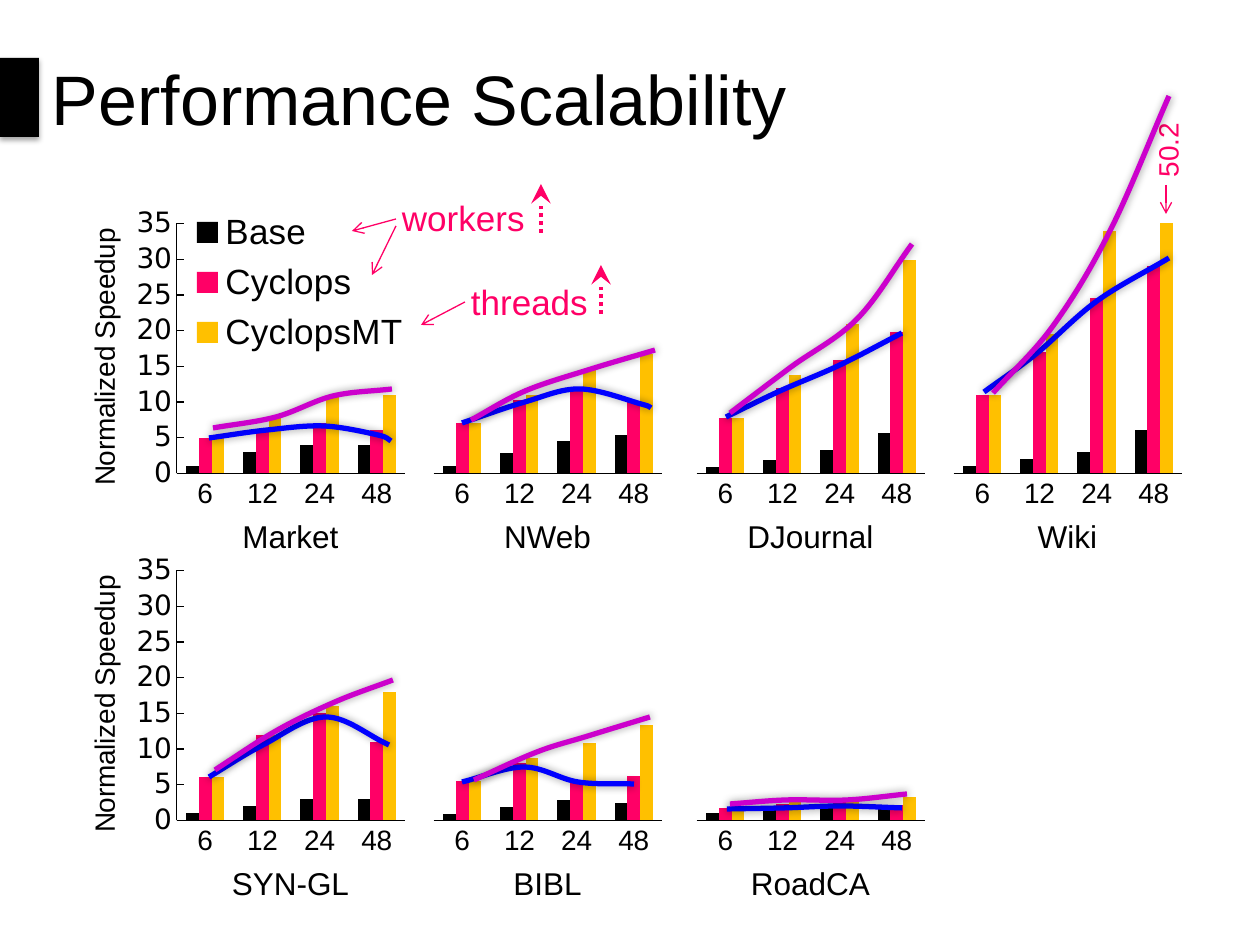
from dataclasses import dataclass

from pptx import Presentation
from pptx.chart.data import CategoryChartData
from pptx.dml.color import RGBColor
from pptx.enum.chart import XL_CHART_TYPE, XL_LEGEND_POSITION, XL_TICK_MARK
from pptx.enum.dml import MSO_LINE
from pptx.enum.shapes import MSO_CONNECTOR, MSO_SHAPE
from pptx.enum.text import MSO_ANCHOR, PP_ALIGN
from pptx.oxml import parse_xml
from pptx.oxml.ns import nsdecls
from pptx.util import Emu, Pt

EMU_PER_PX = 914400 / 126


def px(length):
    return Emu(round(length * EMU_PER_PX))


def apply(target, values):
    for name, value in values.items():
        setattr(target, name, value)


@dataclass(frozen=True)
class Theme:
    ink: RGBColor = RGBColor(0, 0, 0)
    accent: RGBColor = RGBColor(0xFF, 0x00, 0x66)
    gold: RGBColor = RGBColor(0xFF, 0xC0, 0x00)
    trend: RGBColor = RGBColor(0x00, 0x00, 0xFF)
    trend_mt: RGBColor = RGBColor(0xCC, 0x00, 0xCC)
    font: str = "Arial"
    chart_font: str = "Calibri"
    scale_font: str = "DejaVu Sans"
    title: int = 40
    callout: int = 20
    label: int = 18
    axis: int = 16


class SpeedupSlide:
    """Draws styled elements on one slide with lengths in px."""

    def __init__(self, slide, theme):
        self.slide, self.theme = slide, theme

    def set_font(self, font, size, color=None, name=None):
        apply(font, {"size": Pt(size), "name": name or self.theme.font, "bold": False})
        font.color.rgb = color or self.theme.ink

    def set_line(self, line, color, width):
        line.color.rgb = color
        line.width = Pt(width)

    def set_shadow(self, shape, alpha, blur, distance=0, angle=0):
        shape.element.spPr.append(parse_xml(
            f'<a:effectLst {nsdecls("a")}><a:outerShdw blurRad="{Pt(blur)}" dist="{Pt(distance)}" '
            f'dir="{angle * 60000}" algn="ctr" rotWithShape="0"><a:srgbClr val="{self.theme.ink}">'
            f'<a:alpha val="{alpha * 1000}"/></a:srgbClr></a:outerShdw></a:effectLst>'))

    def set_layout(self, parent, position, box, inner=False):
        for old in parent.xpath("c:layout"):
            parent.remove(old)
        target = '<c:layoutTarget val="inner"/>' if inner else ""
        modes = "".join(f'<c:{side}Mode val="edge"/>' for side in "xy")
        sizes = "".join(f'<c:{side} val="{value}"/>' for side, value in zip("xywh", box))
        parent.insert(position, parse_xml(
            f'<c:layout {nsdecls("c")}><c:manualLayout>{target}{modes}{sizes}'
            "</c:manualLayout></c:layout>"))

    def text(self, words, box, size, color=None, align=PP_ALIGN.CENTER,
             spacing=0.8, insets=(0, 0, 0, 0), wrap=False, rotation=0):
        label = self.slide.shapes.add_textbox(*map(px, box))
        label.rotation = rotation
        left, top, right, bottom = map(px, insets)
        apply(label.text_frame, {
            "word_wrap": wrap, "vertical_anchor": MSO_ANCHOR.MIDDLE,
            "margin_left": left, "margin_top": top,
            "margin_right": right, "margin_bottom": bottom})
        paragraph = label.text_frame.paragraphs[0]
        apply(paragraph, {"alignment": align, "line_spacing": spacing})
        run = paragraph.add_run()
        run.text = words
        self.set_font(run.font, size, color)

    def block(self, box):
        bar = self.slide.shapes.add_shape(MSO_SHAPE.RECTANGLE, *map(px, box))
        bar.fill.solid()
        bar.fill.fore_color.rgb = self.theme.ink
        bar.line.fill.background()
        self.set_shadow(bar, 35, 3.1, 1.8, 90)

    def arrow(self, start, end, width=0.75, head="arrow", head_size="med", dash=None):
        pointer = self.slide.shapes.add_connector(
            MSO_CONNECTOR.STRAIGHT, *map(px, (*start, *end)))
        self.set_line(pointer.line, self.theme.accent, width)
        pointer.line.dash_style = dash
        pointer.element.spPr.xpath("a:ln")[0].append(parse_xml(
            f'<a:tailEnd {nsdecls("a")} type="{head}" w="{head_size}" len="{head_size}"/>'))
        pointer.element.spPr.append(parse_xml(f'<a:effectLst {nsdecls("a")}/>'))

    def curve(self, anchors, color):
        last = len(anchors) - 1
        tangents = []
        for i in range(last + 1):
            before, after = max(i - 1, 0), min(i + 1, last)
            tangents.append([(b - a) / (3 * (after - before))
                             for a, b in zip(anchors[before], anchors[after])])
        points = []
        for i in range(last):
            points += [[p + t for p, t in zip(anchors[i], tangents[i])],
                       [p - t for p, t in zip(anchors[i + 1], tangents[i + 1])],
                       anchors[i + 1]]
        builder = self.slide.shapes.build_freeform(*map(px, anchors[0]))
        builder.add_line_segments([tuple(map(px, p)) for p in points], close=False)
        trend = builder.convert_to_shape()
        trend.fill.background()
        self.set_line(trend.line, color, 3)
        self.set_shadow(trend, 40, 5)
        segments = trend.element.xpath(".//a:lnTo")
        outline = segments[0].getparent()
        for i in range(0, len(segments), 3):
            bezier = parse_xml(f'<a:cubicBezTo {nsdecls("a")}/>')
            for segment in segments[i:i + 3]:
                bezier.append(segment[0])
                outline.remove(segment)
            outline.append(bezier)

    def chart(self, box, names, rows, maximum, step, scaled, legend):
        theme = self.theme
        data = CategoryChartData()
        data.categories = ["6", "12", "24", "48"]
        for name, row in zip(names, rows):
            data.add_series(name, row)
        chart = self.slide.shapes.add_chart(
            XL_CHART_TYPE.COLUMN_CLUSTERED, *map(px, box), data).chart
        apply(chart, {"has_title": False, "has_legend": legend})
        self.set_font(chart.font, theme.label, name=theme.chart_font)
        plot = chart.plots[0]
        apply(plot, {"gap_width": 150, "vary_by_categories": False})
        for series, color in zip(plot.series, (theme.ink, theme.accent, theme.gold)):
            series.format.fill.solid()
            series.format.fill.fore_color.rgb = color
        workers, speedup = chart.category_axis, chart.value_axis
        none = XL_TICK_MARK.NONE
        apply(workers, {"major_tick_mark": none, "minor_tick_mark": none})
        apply(speedup, {
            "minimum_scale": 0, "maximum_scale": maximum, "major_unit": step,
            "has_major_gridlines": False, "visible": scaled,
            "major_tick_mark": XL_TICK_MARK.INSIDE, "minor_tick_mark": none})
        for axis, name in ((workers, theme.font), (speedup, theme.scale_font)):
            self.set_font(axis.tick_labels.font, theme.axis, name=name)
            self.set_line(axis.format.line, theme.ink, 0.75)
        if scaled:
            run = speedup.axis_title.text_frame.paragraphs[0].add_run()
            run.text = "Normalized Speedup"
            self.set_font(run.font, theme.axis)
            heading = chart.element.xpath(".//c:valAx/c:title")[0]
            apply_rotation = heading.xpath(".//a:bodyPr")[0].set
            apply_rotation("rot", "-5400000")
            apply_rotation("vert", "horz")
            self.set_layout(heading, 1, (0.03, 0.08))
        self.set_layout(chart.element.xpath(".//c:plotArea")[0], 0,
                        (0.3, 0.08, 0.65, 0.7), inner=True)
        if legend:
            apply(chart.legend, {"position": XL_LEGEND_POSITION.RIGHT, "include_in_layout": True})
            self.set_font(chart.legend.font, theme.callout)
            self.set_layout(chart.element.xpath(".//c:legend")[0], 1, (0.34, 0.02, 0.62, 0.45))


LEFTS, TOPS = (71, 328, 591, 848), (195, 542)
SYSTEMS = ("Base", "Cyclops", "CyclopsMT")
UNNAMED = ("Series 1", "Series 2", "Series 3")
DATASETS = [
    ("Market", 35, 5, [(1, 3, 4, 4), (5, 6, 7, 6), (5, 8, 11, 11)],
     [(209, 438), (267, 430), (324, 426), (378, 435), (391, 441)],
     [(213, 428), (276, 417), (333, 396), (392, 389)]),
    ("NWeb", 210, 30, [(6, 17, 27, 32), (42, 62, 70, 61), (42, 66, 87, 100)],
     [(462, 423), (525, 402), (580, 389), (641, 404), (651, 408)],
     [(471, 420), (525, 391), (591, 369), (655, 350)]),
    ("DJournal", 117, 17, [(3, 6, 11, 19), (26, 40, 53, 66), (26, 46, 70, 100)],
     [(726, 417), (780, 391), (840, 365), (902, 333)],
     [(730, 413), (791, 367), (857, 319), (912, 244)]),
    ("Wiki", 70, 10, [(2, 4, 6, 12), (22, 34, 49, 58), (22, 39, 68, 100)],
     [(984, 392), (1036, 354), (1097, 301), (1169, 258)],
     [(993, 393), (1053, 326), (1110, 231), (1169, 96)]),
    ("SYN-GL", 35, 5, [(1, 2, 3, 3), (6, 12, 15, 11), (6, 12, 16, 18)],
     [(209, 777), (263, 745), (326, 717), (389, 745)],
     [(215, 770), (276, 731), (335, 702), (393, 680)]),
    ("BIBL", 262, 37, [(7, 14, 21, 18), (41, 60, 42, 46), (41, 65, 81, 100)],
     [(462, 782), (524, 767), (578, 782), (634, 784)],
     [(474, 780), (537, 752), (588, 736), (650, 717)]),
    ("RoadCA", 1084, 155, [(31, 47, 52, 49), (55, 70, 81, 65), (55, 80, 92, 100)],
     [(727, 809), (784, 808), (840, 806), (902, 808)],
     [(730, 804), (786, 800), (847, 800), (907, 794)]),
]


def main():
    deck = Presentation()
    apply(deck, {"slide_width": px(1260), "slide_height": px(945)})
    theme = Theme()
    page = SpeedupSlide(deck.slides.add_slide(deck.slide_layouts[6]), theme)
    page.text("Performance Scalability", (39, 0, 1221, 195), theme.title,
              align=PP_ALIGN.LEFT, spacing=1.0, insets=(13, 6, 13, 6), wrap=True)
    page.block((0, 58, 39, 79))
    for index, (dataset, maximum, step, rows, _, _) in enumerate(DATASETS):
        row, column = divmod(index, len(LEFTS))
        left, top = LEFTS[column], TOPS[row]
        page.chart((left, top, 352, 357), UNNAMED if index else SYSTEMS, rows,
                   maximum, step, scaled=column == 0, legend=index == 0)
        page.text(dataset, (left + 118, top + 322, 203, 44), theme.label)
    page.text("50.2", (1136, 135, 69, 30), theme.axis, theme.accent, rotation=270)
    page.arrow((1166, 185), (1166, 214))
    for *_, cyclops, cyclops_mt in DATASETS:
        page.curve(cyclops, theme.trend)
        page.curve(cyclops_mt, theme.trend_mt)
    for words, left, top in (("threads", 471, 284), ("workers", 402, 200)):
        page.text(words, (left, top, 139, 35), theme.callout, theme.accent,
                  align=PP_ALIGN.LEFT, insets=(0, 8, 0, 0))
    for start, end in (((465, 302), (421, 325)), ((396, 219), (352, 231)),
                       ((396, 226), (372, 275))):
        page.arrow(start, end)
    for x, bottom in ((541, 233), (601, 314)):
        page.arrow((x, bottom), (x, bottom - 49), 2.25, "stealth", "lg", MSO_LINE.ROUND_DOT)
    deck.save("out.pptx")


if __name__ == "__main__":
    main()
